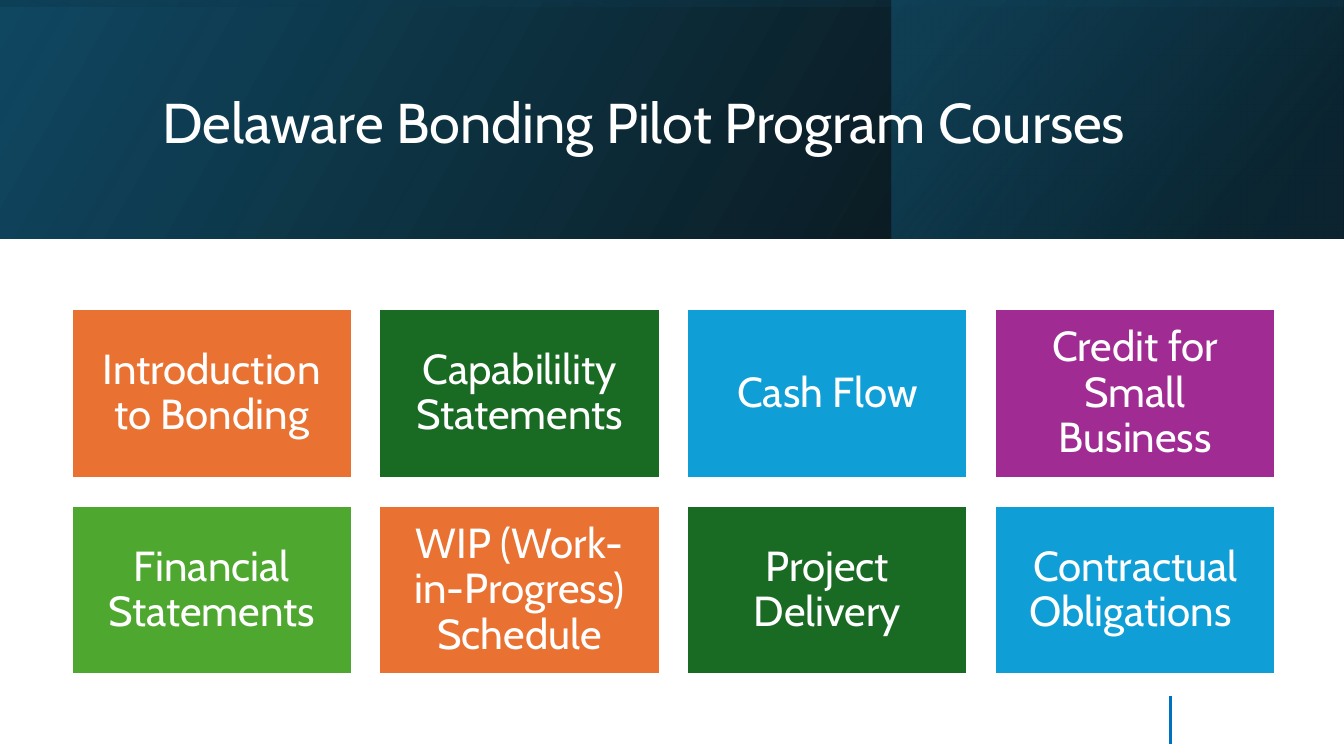
import dataclasses

import pptx
import pptx.dml.color
import pptx.enum.shapes
import pptx.enum.text
import pptx.oxml.ns
import pptx.shapes.autoshape
import pptx.slide
import pptx.text.text
import pptx.util
from lxml import etree

Inches = pptx.util.Inches
Pt = pptx.util.Pt
RGB = pptx.dml.color.RGBColor
qn = pptx.oxml.ns.qn
RECT = pptx.enum.shapes.MSO_SHAPE.RECTANGLE

COLORS = {
    "white": "FFFFFF", "black": "000000", "navy": "104862",
    "deep": "0B3041", "teal": "156082", "orange": "E97132",
    "forest": "196B24", "sky": "0F9ED5", "purple": "A02B93",
    "green": "4EA72E", "rule": "0070C0",
}
FONT = "Cabin"


@dataclasses.dataclass(frozen=True)
class Stop:
    place: float
    color: str
    alpha: int


@dataclasses.dataclass(frozen=True)
class Band:
    left: float
    top: float
    width: float
    height: float
    angle: float
    stops: tuple[Stop, Stop]
    turn: float = 0


@dataclasses.dataclass(frozen=True)
class Course:
    name: str
    color: str


BANDS = [
    Band(0, 0, 13.33, 2.37, 30,
         (Stop(0, "black", 96), Stop(1, "navy", 100))),
    Band(8.84, 0, 4.48, 2.37, 40,
         (Stop(0.19, "deep", 68), Stop(1, "teal", 48))),
    Band(5.48, -5.48, 2.37, 13.33, 10,
         (Stop(0.23, "navy", 16), Stop(0.99, "black", 45)), 270),
]
COURSES = [
    Course("Introduction to Bonding", "orange"),
    Course("Capabilility Statements", "forest"),
    Course("Cash Flow", "sky"),
    Course("Credit for Small Business", "purple"),
    Course("Financial Statements", "green"),
    Course("WIP (Work-in-Progress) Schedule", "orange"),
    Course("Project Delivery", "forest"),
    Course("Contractual Obligations ", "sky"),
]
COLS = 4
LEFT, RIGHT, TOP = 0.71, 12.65, 3.07
WIDTH, HEIGHT = 2.78, 1.67
STEP_X = (RIGHT - LEFT - WIDTH) / (COLS - 1)
STEP_Y = 1.95


def paint(name: str) -> RGB:
    return RGB.from_string(COLORS[name])


def add_rect(slide: pptx.slide.Slide, left: float, top: float,
             width: float, height: float) -> pptx.shapes.autoshape.Shape:
    rect = slide.shapes.add_shape(
        RECT, Inches(left), Inches(top), Inches(width), Inches(height))
    rect.shadow.inherit = False
    return rect


def set_text(frame: pptx.text.text.TextFrame, text: str, size: float,
             align: pptx.enum.text.PP_ALIGN) -> None:
    frame.text = text
    frame.word_wrap = True
    frame.auto_size = pptx.enum.text.MSO_AUTO_SIZE.NONE
    frame.vertical_anchor = pptx.enum.text.MSO_ANCHOR.MIDDLE
    para = frame.paragraphs[0]
    para.alignment = align
    para.line_spacing = 0.9
    font = para.runs[0].font
    font.name = FONT
    font.size = Pt(size)
    font.color.rgb = paint("white")


def add_band(slide: pptx.slide.Slide, band: Band) -> None:
    """Draw a mirrored rectangle with a see-through gradient."""
    rect = add_rect(slide, band.left, band.top, band.width, band.height)
    rect.rotation = band.turn
    rect._element.spPr.find(qn("a:xfrm")).set("flipH", "1")
    rect.line.fill.background()
    rect.fill.gradient()
    rect.fill.gradient_angle = band.angle
    for target, stop in zip(rect.fill.gradient_stops, band.stops):
        target.position = stop.place
        target.color.rgb = paint(stop.color)
    tints = rect._element.spPr.iter(qn("a:srgbClr"))
    for tint, stop in zip(list(tints), band.stops):
        etree.SubElement(tint, qn("a:alpha")).set("val", str(stop.alpha * 1000))


def add_course(slide: pptx.slide.Slide, index: int, course: Course) -> None:
    row, col = divmod(index, COLS)
    card = add_rect(slide, LEFT + col * STEP_X, TOP + row * STEP_Y,
                    WIDTH, HEIGHT)
    card.fill.solid()
    card.fill.fore_color.rgb = paint(course.color)
    card.line.color.rgb = paint("white")
    card.line.width = Pt(1.5)
    frame = card.text_frame
    frame.margin_left = frame.margin_right = Inches(0.12)
    frame.margin_top = frame.margin_bottom = Inches(0.12)
    set_text(frame, course.name, 30, pptx.enum.text.PP_ALIGN.CENTER)


def add_title(slide: pptx.slide.Slide, text: str) -> None:
    """Fill the title and bring it in front of the bands."""
    title = slide.shapes.title
    title.left, title.top = Inches(1.51), Inches(0.38)
    title.width, title.height = Inches(10.63), Inches(1.72)
    set_text(title.text_frame, text, 40, pptx.enum.text.PP_ALIGN.LEFT)
    slide.shapes._spTree.append(title._element)


def add_rule(slide: pptx.slide.Slide) -> None:
    rule = slide.shapes.add_connector(
        pptx.enum.shapes.MSO_CONNECTOR.STRAIGHT,
        Inches(11.61), Inches(6.9), Inches(11.61), Inches(7.38))
    rule.line.color.rgb = paint("rule")
    rule.line.width = Pt(2.25)
    etree.SubElement(rule._element.spPr, qn("a:effectLst"))


def main() -> None:
    deck = pptx.Presentation()
    deck.slide_width, deck.slide_height = Inches(13.33), Inches(7.5)
    slide = deck.slides.add_slide(deck.slide_layouts[5])
    for band in BANDS:
        add_band(slide, band)
    add_title(slide, "Delaware Bonding Pilot Program Courses")
    for index, course in enumerate(COURSES):
        add_course(slide, index, course)
    add_rule(slide)
    deck.save("out.pptx")


if __name__ == "__main__":
    main()
